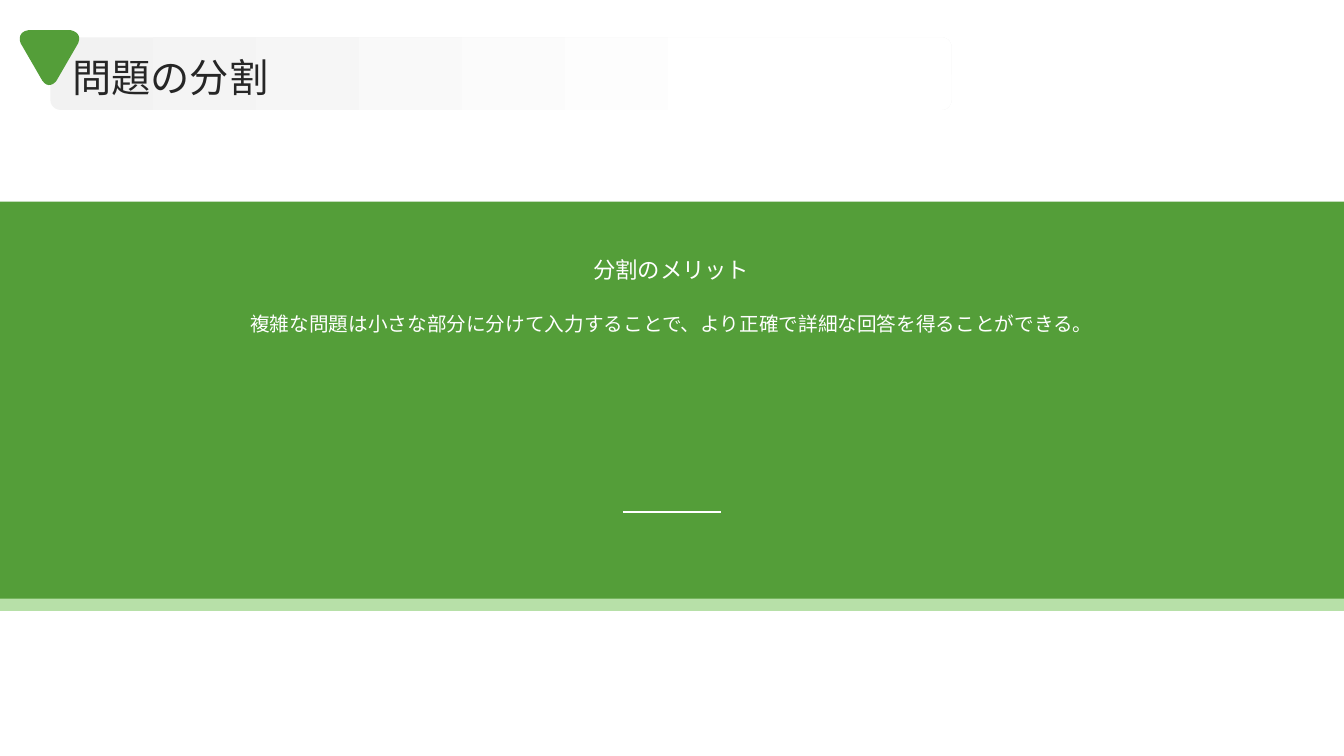
import pptx
import pptx.util
import pptx.dml.color
import pptx.enum.shapes
import pptx.enum.text
import lxml.etree

Pt = pptx.util.Pt
RGBColor = pptx.dml.color.RGBColor
SHAPE = pptx.enum.shapes.MSO_SHAPE
ALIGN = pptx.enum.text.PP_ALIGN
ANCHOR = pptx.enum.text.MSO_ANCHOR
AUTO_SIZE = pptx.enum.text.MSO_AUTO_SIZE

GREEN = RGBColor(0x54, 0x9E, 0x39)
LIGHT_GREEN = RGBColor(0xB7, 0xE0, 0xA8)
PALE_GRAY = RGBColor(0xF2, 0xF2, 0xF2)
DARK_GRAY = RGBColor(0x26, 0x26, 0x26)
WHITE = RGBColor(0xFF, 0xFF, 0xFF)


def add_text(s, text, box, size, color, align, anchor=ANCHOR.TOP):
    sp = s.shapes.add_textbox(*(Pt(v) for v in box))
    tf = sp.text_frame
    tf.word_wrap = True
    tf.margin_left = tf.margin_right = tf.margin_top = tf.margin_bottom = 0
    tf.vertical_anchor = anchor
    p = tf.paragraphs[0]
    p.text = text
    p.alignment = align
    p.font.name = "Cambria"
    p.font.size = Pt(size)
    p.font.color.rgb = color
    return sp


def curve_points(start, control, end, steps=10):
    """Sample a cubic curve whose first control point is its start."""
    for i in range(1, steps + 1):
        t = i / steps
        a, b, c = (1 - t) ** 3 + 3 * t * (1 - t) ** 2, 3 * t * t * (1 - t), t ** 3
        yield tuple(a * u + b * v + c * w for u, v, w in zip(start, control, end))


prs = pptx.Presentation()
prs.slide_width, prs.slide_height = Pt(960), Pt(540)
s = prs.slides.add_slide(prs.slide_layouts[6])

# Full-width band with a light edge below
for top, color in ((152.64, LIGHT_GREEN), (144, GREEN)):
    sp = s.shapes.add_shape(SHAPE.RECTANGLE, 0, Pt(top), prs.slide_width, Pt(283.68))
    sp.shadow.inherit = False
    sp.fill.solid()
    sp.fill.fore_color.rgb = color
    sp.line.fill.background()

add_text(s, "複雑な問題は小さな部分に分けて入力することで、より正確で詳細な回答を得ることができる。",
         (125.28, 222.48, 709.2, 113.04), 14, WHITE, ALIGN.CENTER)

rule = s.shapes.add_connector(pptx.enum.shapes.MSO_CONNECTOR.STRAIGHT,
                              Pt(445), Pt(365.76), Pt(515), Pt(365.76))
rule.line.color.rgb = WHITE
rule.line.width = Pt(1)
lxml.etree.SubElement(rule._element.spPr, pptx.oxml.ns.qn("a:effectLst"))

heading = add_text(s, "分割のメリット", (79.92, 182.88, 799.2, 18), 16, WHITE, ALIGN.CENTER)
heading.text_frame.auto_size = AUTO_SIZE.SHAPE_TO_FIT_TEXT

# Title bar fading to white
bar = s.shapes.add_shape(SHAPE.ROUNDED_RECTANGLE, Pt(36), Pt(26.64), Pt(643.68), Pt(51.84))
bar.adjustments[0] = 0.14
bar.shadow.inherit = False
bar.line.fill.background()
bar.fill.gradient()
bar.fill.gradient_angle = 0
for stop, position, color in zip(bar.fill.gradient_stops, (0, 0.8), (PALE_GRAY, WHITE)):
    stop.position = position
    stop.color.rgb = color

add_text(s, "問題の分割", (51.84, 36.72, 840.24, 36.72), 28, DARK_GRAY, ALIGN.LEFT, ANCHOR.MIDDLE)

# Triangle marker: each rounded corner is (start, control, end)
corners = (
    ((50.4, 21.6), (59.2, 23), (55.8, 31)),
    ((40.4, 57.6), (35.3, 64.8), (30.2, 57.6)),
    ((14.8, 31), (11.4, 23), (20.2, 21.6)),
)
outline = []
for corner in corners:
    outline += [corner[0], *curve_points(*corner)]
builder = s.shapes.build_freeform(Pt(outline[0][0]), Pt(outline[0][1]))
builder.add_line_segments([(Pt(x), Pt(y)) for x, y in outline[1:]], close=True)
marker = builder.convert_to_shape()
marker.shadow.inherit = False
marker.fill.solid()
marker.fill.fore_color.rgb = GREEN
marker.line.fill.background()

prs.save("out.pptx")
